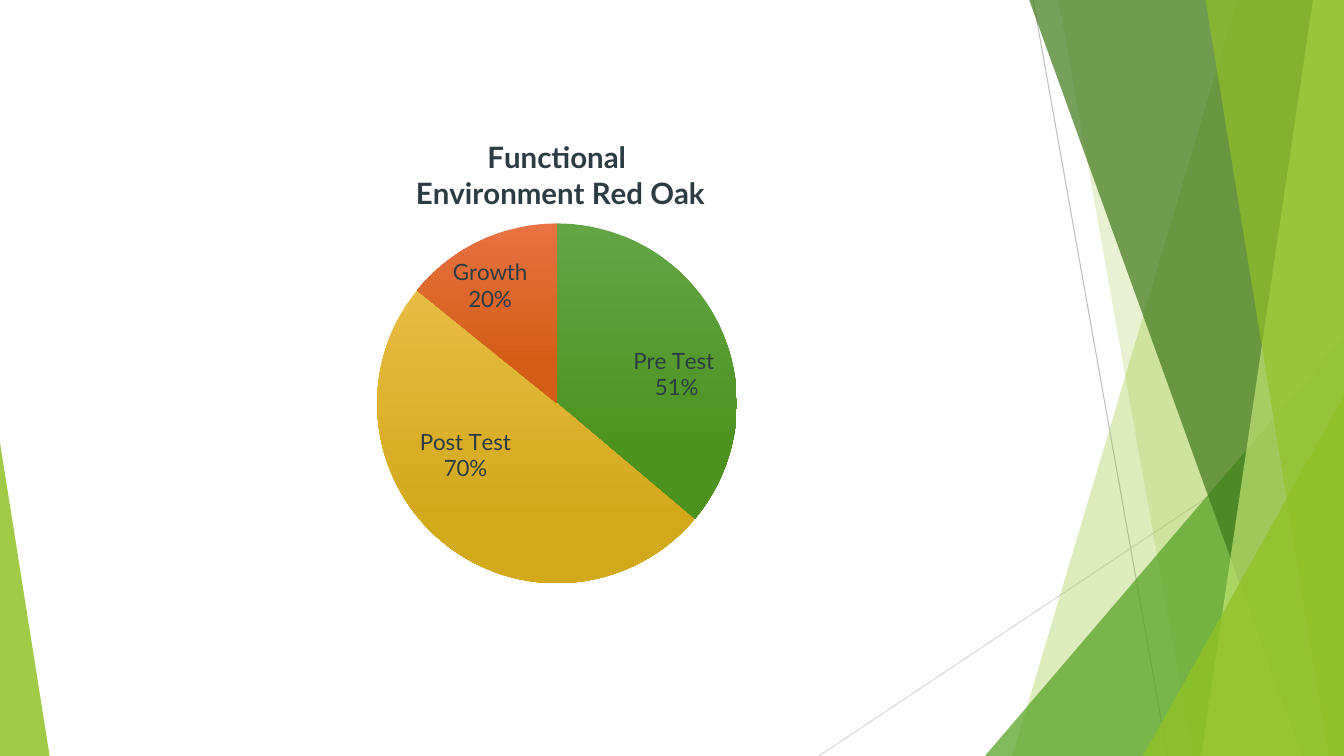
from pptx import Presentation
from pptx.chart.data import CategoryChartData
from pptx.dml.color import RGBColor
from pptx.enum.chart import XL_CHART_TYPE, XL_LABEL_POSITION
from pptx.enum.shapes import MSO_CONNECTOR, MSO_SHAPE
from pptx.oxml import parse_xml
from pptx.oxml.ns import nsdecls, qn
from pptx.util import Pt

W, H = 960, 540
FONT = "Lato"
LIME = RGBColor(0x90, 0xC2, 0x26)
GREEN = RGBColor(0x54, 0xA0, 0x21)
DARK_GREEN = RGBColor(0x3F, 0x78, 0x19)
PALE_LIME = RGBColor(0xC0, 0xE4, 0x74)
GREY = RGBColor(0xBF, 0xBF, 0xBF)
LIGHT_GREY = RGBColor(0xD9, 0xD9, 0xD9)
SLATE = RGBColor(0x2C, 0x3C, 0x43)
BLACK = RGBColor(0, 0, 0)
SLICE_GRADIENTS = [
    (RGBColor(0x97, 0xC5, 0x47), RGBColor(0x84, 0xB2, 0x23)),
    (RGBColor(0x63, 0xA5, 0x45), RGBColor(0x4D, 0x92, 0x1E)),
    (RGBColor(0xE7, 0xBC, 0x43), RGBColor(0xD2, 0xA9, 0x1B)),
    (RGBColor(0xE8, 0x72, 0x42), RGBColor(0xD3, 0x5D, 0x16)),
]


def paint(shape, color, opacity):
    """Fill with a see-through colour, without line or shadow."""
    shape.shadow.inherit = False
    shape.line.fill.background()
    shape.fill.solid()
    shape.fill.fore_color.rgb = color
    clr = shape._element.spPr.find(".//" + qn("a:srgbClr"))
    clr.append(parse_xml(f'<a:alpha {nsdecls("a")} val="{opacity * 1000}"/>'))


def add_line(s, x1, y1, x2, y2, color):
    line = s.shapes.add_connector(MSO_CONNECTOR.STRAIGHT, Pt(x1), Pt(y1), Pt(x2), Pt(y2))
    line.line.color.rgb = color
    line.line.width = Pt(0.75)
    line._element.spPr.append(parse_xml(f'<a:effectLst {nsdecls("a")}/>'))


def add_band(s, top_x, bottom_x, color, opacity):
    """Band with a slanted left side that runs to the right slide edge."""
    fb = s.shapes.build_freeform(Pt(top_x), Pt(-0.6))
    fb.add_line_segments([(Pt(W), Pt(-0.6)), (Pt(W), Pt(H)), (Pt(bottom_x), Pt(H))])
    paint(fb.convert_to_shape(), color, opacity)


def add_corner(s, x, width, height, apex, color, opacity):
    """Triangle standing on the bottom slide edge."""
    tri = s.shapes.add_shape(MSO_SHAPE.ISOSCELES_TRIANGLE,
                             Pt(x), Pt(H - height), Pt(width), Pt(height))
    tri.adjustments[0] = apex
    paint(tri, color, opacity)


def add_backdrop(s):
    add_line(s, 738, 0, 834, H, GREY)
    add_line(s, W, 290, 585, H, LIGHT_GREY)
    add_band(s, 884, 723, LIME, 30)
    add_band(s, 756, 852, LIME, 20)
    add_corner(s, 703.5, 256.5, 300, 1, GREEN, 72)
    add_band(s, 735, 930, DARK_GREEN, 70)
    add_band(s, 938, 858, PALE_LIME, 70)
    add_band(s, 861, 949, LIME, 65)
    add_corner(s, 816.5, 143.5, 257, 1, LIME, 80)
    add_corner(s, 0, 35.5, 224, 0, LIME, 85)


def place(element, index, **values):
    """Give a chart part a manual layout, as its child number index."""
    for old in element.findall(qn("c:layout")):
        element.remove(old)
    tags = "".join(f'<c:{tag} val="{val}"/>' for tag, val in values.items())
    element.insert(index, parse_xml(
        f'<c:layout {nsdecls("c")}><c:manualLayout>{tags}</c:manualLayout></c:layout>'))


def write_lines(tf, lines, size, bold):
    for i, text in enumerate(lines):
        p = tf.paragraphs[0] if i == 0 else tf.add_paragraph()
        r = p.add_run()
        r.text = text
        r.font.name, r.font.size, r.font.bold = FONT, Pt(size), bold
        r.font.color.rgb = SLATE


def explode(element, index, percent):
    element.insert(index, parse_xml(f'<c:explosion {nsdecls("c")} val="{percent}"/>'))


def color_slices(series):
    for i, colors in enumerate(SLICE_GRADIENTS):
        fill = series.points[i].format.fill
        fill.gradient()
        fill.gradient_angle = 270
        for stop, position, color in zip(fill.gradient_stops, (0, 0.78), colors):
            stop.position = position
            stop.color.rgb = color
    ser = series._element
    for dpt in ser.findall(qn("c:dPt")):
        explode(dpt, dpt.index(dpt.find(qn("c:spPr"))), 0)
    explode(ser, ser.index(ser.find(qn("c:dPt"))), 3)


def label_slices(series):
    labels = series.data_labels
    labels.show_value = True
    labels.number_format = "0%"
    labels.number_format_is_linked = False
    labels.font.name, labels.font.size = FONT, Pt(16)
    labels.font.color.rgb = SLATE
    texts = [(("Pre Test", " 51%"), 0.04, 0.016),
             (("Post Test", "70%"), -0.039, -0.035),
             (("Growth", "20%"), -0.032, -0.073)]
    for i, (lines, dx, dy) in enumerate(texts, start=1):
        label = series.points[i].data_label
        write_lines(label.text_frame, lines, 16, False)
        label.position = XL_LABEL_POSITION.CENTER
        place(labels._element.findall(qn("c:dLbl"))[i - 1], 1, x=dx, y=dy)


def add_pie(s):
    data = CategoryChartData(number_format="0%")
    data.categories = ["1", "2", "3", "4"]
    data.add_series("Series 1", (None, 0.51, 0.7, 0.2))
    chart = s.shapes.add_chart(XL_CHART_TYPE.PIE, Pt(88.5), Pt(89.5),
                               Pt(629.5), Pt(364.5), data).chart
    chart.has_legend = False
    chart.font.name, chart.font.size = FONT, Pt(10)
    chart.font.color.rgb = BLACK
    chart.has_title = True
    title = chart.chart_title
    write_lines(title.text_frame, ["Functional ", "Environment Red Oak"], 21, True)
    place(title._element, 1, xMode="edge", yMode="edge", x=0.328, y=0.018)
    place(chart._chartSpace.chart.plotArea, 0, layoutTarget="inner", xMode="edge",
          yMode="edge", x=0.237, y=0.182, w=0.509, h=0.726)
    plot = chart.plots[0]
    plot.vary_by_categories = True
    series = plot.series[0]
    color_slices(series)
    label_slices(series)


def main():
    prs = Presentation()
    prs.slide_width, prs.slide_height = Pt(W), Pt(H)
    s = prs.slides.add_slide(prs.slide_layouts[6])
    add_backdrop(s)
    add_pie(s)
    prs.save("out.pptx")


if __name__ == "__main__":
    main()
